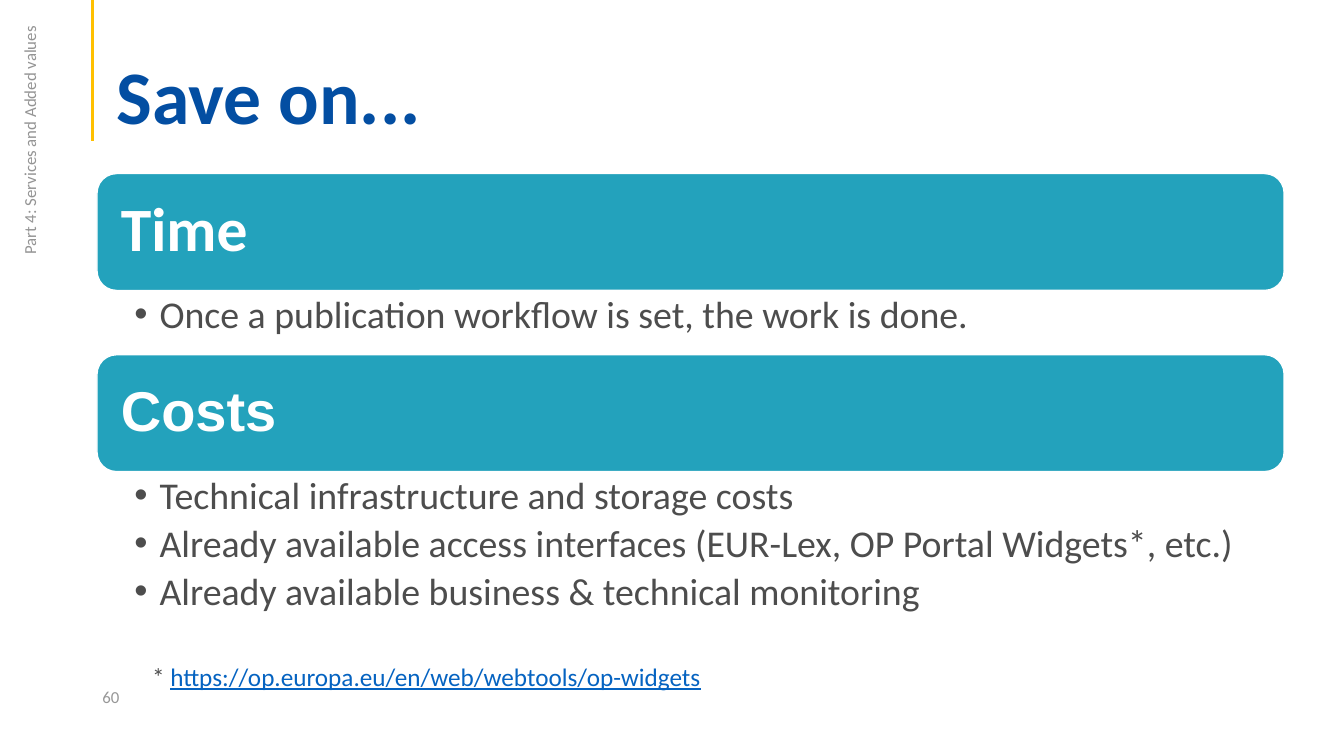
from lxml.etree import SubElement
from pptx import Presentation
from pptx.dml.color import RGBColor
from pptx.enum.shapes import MSO_CONNECTOR as CONN, MSO_SHAPE as SHAPE
from pptx.enum.text import MSO_ANCHOR as ANCHOR, PP_ALIGN as ALIGN
from pptx.oxml.ns import qn
from pptx.util import Pt

WHITE = RGBColor(0xFF, 0xFF, 0xFF)
BLUE = RGBColor(0x03, 0x4E, 0xA2)
TEAL = RGBColor(0x23, 0xA2, 0xBC)
GOLD = RGBColor(0xFF, 0xC0, 0x00)
DARK = RGBColor(0x4D, 0x4D, 0x4D)
GREY = RGBColor(0x97, 0x97, 0x97)
LIGHT = RGBColor(0x94, 0x94, 0x94)
LINK = RGBColor(0x05, 0x63, 0xC1)

BAR_H = 83.5
SECTIONS = [
    (45.9, "Time", {"size": Pt(44), "name": "Calibri"},
     ["Once a publication workflow is set, the work is done."]),
    (145.4, "Costs", {"size": Pt(40), "name": "Arial"},
     ["Technical infrastructure and storage costs",
      "Already available access interfaces (EUR-Lex, OP Portal Widgets*, etc.)",
      "Already available business & technical monitoring"]),
]


def set_frame(tf, margins=(7.2, 3.6, 7.2, 3.6), anchor=ANCHOR.TOP, wrap=True):
    sides = ("margin_left", "margin_top", "margin_right", "margin_bottom")
    for side, value in zip(sides, margins):
        setattr(tf, side, Pt(value))
    tf.vertical_anchor = anchor
    tf.word_wrap = wrap


def add_run(p, text, color, **formats):
    r = p.add_run()
    r.text = text
    r.font.color.rgb = color
    for name, value in ({"name": "Calibri"} | formats).items():
        setattr(r.font, name, value)


def add_text(s, box, **frame):
    sp = s.shapes.add_textbox(*map(Pt, box))
    set_frame(sp.text_frame, **frame)
    return sp


def add_bullet(p):
    pPr = p._p.get_or_add_pPr()
    pPr.set("marL", str(Pt(18)))
    pPr.set("indent", str(-Pt(18)))
    SubElement(pPr, qn("a:buFont")).set("typeface", "Arial")
    SubElement(pPr, qn("a:buChar")).set("char", "•")
    p.line_spacing = 0.9


# Title with the gold rule on its left
def add_title(s, left, top, width, height):
    rule = s.shapes.add_connector(CONN.STRAIGHT, Pt(left), 0, Pt(left), Pt(top + height))
    rule.line.color.rgb = GOLD
    rule.line.width = Pt(2.25)
    SubElement(rule._element.spPr, qn("a:effectLst"))
    sp = add_text(s, (left + 10, top, width - 10, height),
                  margins=(7.2, 3.6, 7.2, 0), anchor=ANCHOR.BOTTOM)
    p = sp.text_frame.paragraphs[0]
    p.line_spacing = 0.9
    add_run(p, "Save on...", BLUE, size=Pt(54), bold=True)


# Heading bar with its bullet list below
def add_section(s, left, top, width, list_h, heading, formats, items):
    bar = s.shapes.add_shape(SHAPE.ROUNDED_RECTANGLE, Pt(left), Pt(top), Pt(width), Pt(BAR_H))
    bar.shadow.inherit = False
    bar.fill.solid()
    bar.fill.fore_color.rgb = TEAL
    bar.line.color.rgb = WHITE
    bar.line.width = Pt(1)
    set_frame(bar.text_frame, margins=(13, 13, 13, 13), anchor=ANCHOR.MIDDLE)
    p = bar.text_frame.paragraphs[0]
    p.alignment = ALIGN.LEFT
    p.line_spacing = 0.9
    add_run(p, heading, WHITE, bold=True, **formats)

    tf = add_text(s, (left, top + BAR_H, width, list_h),
                  margins=(26.7, 3.6, 19.4, 3.6)).text_frame
    for i, item in enumerate(items):
        p = tf.add_paragraph() if i else tf.paragraphs[0]
        add_bullet(p)
        p.space_after = Pt(5)
        add_run(p, item, DARK, size=Pt(27))


# Footnote, page number and rotated part name
def add_footer(s, left, top, width, height):
    note = add_text(s, (left + 35.5, top, width, height))
    p = note.text_frame.paragraphs[0]
    add_run(p, "* ", DARK, size=Pt(18))
    add_run(p, "https://op.europa.eu/en/web/webtools/op-widgets", LINK,
            size=Pt(18), underline=True)
    page = add_text(s, (left, top + 14.4, 216, height), anchor=ANCHOR.MIDDLE)
    add_run(page.text_frame.paragraphs[0], "60", GREY, size=Pt(12))


def add_part_name(s, left, top, width, height):
    sp = add_text(s, (left, top, width, height), wrap=False)
    sp.rotation = 270
    add_run(sp.text_frame.paragraphs[0], "Part 4: Services and Added values",
            LIGHT, size=Pt(12))


def main():
    prs = Presentation()
    prs.slide_width, prs.slide_height = Pt(960), Pt(540)
    s = prs.slides.add_slide(prs.slide_layouts[6])
    add_title(s, 66.3, 38.2, 838, 62.2)
    top = 124
    for list_h, heading, formats, items in SECTIONS:
        add_section(s, 69.3, top, 848, list_h, heading, formats, items)
        top += BAR_H + list_h
    add_footer(s, 66, 468.7, 649.5, 29)
    add_part_name(s, -68.4, 88.6, 179.3, 21.8)
    prs.save("out.pptx")


if __name__ == "__main__":
    main()
